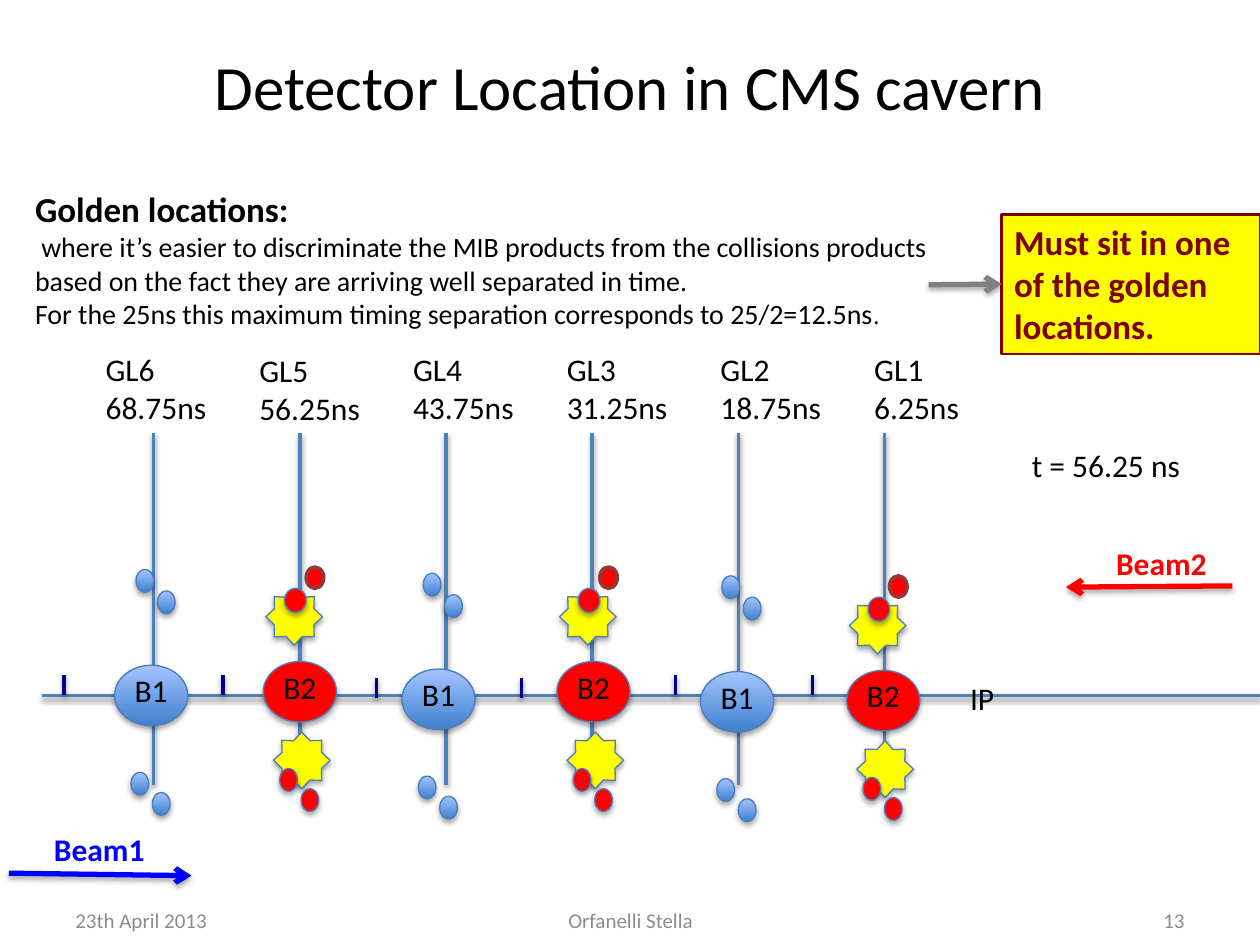
from lxml import etree
from pptx import Presentation
from pptx.dml.color import RGBColor
from pptx.enum.shapes import MSO_CONNECTOR, MSO_SHAPE
from pptx.enum.text import MSO_ANCHOR, PP_ALIGN
from pptx.oxml.ns import qn
from pptx.util import Inches, Pt

COLORS = {
    "black": "000000", "grey": "8C8C8C", "arrow": "808080", "red": "FF0000",
    "blue": "0000FF", "navy": "000090", "maroon": "800000", "yellow": "FFFF00",
    "axis": "4F81BD", "outline": "4B7EBC", "late": "8E3B39",
    "bunch_low": "3F80CE", "bunch_high": "A4C4FF",
}
BEAM1_FILL = ("bunch_low", "bunch_high")


def rgb(name):
    return RGBColor.from_string(COLORS[name])


class SlideBuilder:
    """Holds the style, the slide and the shape collection being filled."""

    font = "Calibri"

    def __init__(self, deck):
        self.slide = deck.slides.add_slide(deck.slide_layouts[5])
        self.shapes = self.slide.shapes

    def begin_group(self):
        self.shapes = self.slide.shapes.add_group_shape().shapes

    def end_group(self):
        self.shapes = self.slide.shapes

    def effect(self, shape, opacity=35, distance=1.8):
        """Give a soft shadow straight below, or none when opacity is 0."""
        properties = shape._element.spPr
        for old in properties.findall(qn("a:effectLst")):
            properties.remove(old)
        effects = etree.SubElement(properties, qn("a:effectLst"))
        if opacity:
            shadow = etree.SubElement(
                effects, qn("a:outerShdw"), blurRad=str(Pt(3.1)),
                dist=str(Pt(distance)), dir="5400000", rotWithShape="0")
            color = etree.SubElement(shadow, qn("a:srgbClr"), val=COLORS["black"])
            etree.SubElement(color, qn("a:alpha"), val=str(opacity * 1000))

    def fill_text(self, frame, paragraphs, color="black", align=PP_ALIGN.LEFT,
                  anchor=MSO_ANCHOR.TOP):
        """Each paragraph is a list of (text, size, bold) runs."""
        frame.word_wrap = True
        frame.vertical_anchor = anchor
        for index, runs in enumerate(paragraphs):
            para = frame.paragraphs[0] if index == 0 else frame.add_paragraph()
            para.alignment = align
            for text, size, bold in runs:
                span = para.add_run()
                span.text = text
                span.font.name = self.font
                span.font.size = Pt(size)
                span.font.bold = bold
                span.font.color.rgb = rgb(color)

    def title(self, text, left, top, width, height):
        title = self.slide.shapes.title
        title.left, title.top = Inches(left), Inches(top)
        title.width, title.height = Inches(width), Inches(height)
        self.fill_text(title.text_frame, [[(text, 36, False)]],
                       align=PP_ALIGN.CENTER, anchor=MSO_ANCHOR.MIDDLE)

    def text(self, left, top, width, height, paragraphs, **style):
        box = self.shapes.add_textbox(
            Inches(left), Inches(top), Inches(width), Inches(height))
        self.fill_text(box.text_frame, paragraphs, **style)

    def label(self, left, top, width, lines, bold=False, **style):
        self.text(left, top, width, 0.1 + 0.3 * len(lines),
                  [[(line, 18, bold)] for line in lines], **style)

    def shape(self, kind, left, top, width, height, fill, line="outline",
              weight=0.75, shadow=35):
        shape = self.shapes.add_shape(
            kind, Inches(left), Inches(top), Inches(width), Inches(height))
        if isinstance(fill, tuple):
            shape.fill.gradient()
            shape.fill.gradient_angle = 90
            for stop, name in zip(shape.fill.gradient_stops, fill):
                stop.color.rgb = rgb(name)
        else:
            shape.fill.solid()
            shape.fill.fore_color.rgb = rgb(fill)
        shape.line.color.rgb = rgb(line)
        shape.line.width = Pt(weight)
        self.effect(shape, shadow)
        return shape

    def line(self, start, end, color, weight=2, arrow=False):
        line = self.shapes.add_connector(
            MSO_CONNECTOR.STRAIGHT, *map(Inches, start + end))
        line.line.color.rgb = rgb(color)
        line.line.width = Pt(weight)
        if arrow:
            outline = line._element.spPr.find(qn("a:ln"))
            etree.SubElement(outline, qn("a:tailEnd"), type="arrow")
            self.effect(line)
        else:
            self.effect(line, 38, 1.6)
        return line

    def beam(self, name, color, start, end, label_at):
        self.begin_group()
        self.line(start, end, color, 3, arrow=True)
        self.label(*label_at, 1.2, [name], bold=True, color=color)
        self.end_group()

    def bunch(self, name, left, top, fill, dots, stars=()):
        """A bunch with its secondary particles, placed relative to its corner."""
        self.begin_group()
        for dx, dy in stars:
            self.shape(MSO_SHAPE.STAR_8_POINT, left + dx, top + dy, 0.45, 0.45, "yellow")
        self.shape(MSO_SHAPE.OVAL, left, top, 0.58, 0.48, fill)
        self.label(left + 0.06, top, 0.52, [name])
        for dx, dy, width, height in dots:
            self.shape(MSO_SHAPE.OVAL, left + dx, top + dy, width, height, fill)
        if stars:
            self.shape(MSO_SHAPE.OVAL, left + 0.34, top - 0.75, 0.14, 0.17,
                       fill, "late", 2, shadow=0)
        self.end_group()


def main():
    deck = Presentation()
    deck.slide_width, deck.slide_height = Inches(10), Inches(7.5)
    page = SlideBuilder(deck)
    page.title("Detector Location in CMS cavern", 1.29, 0, 7.42, 1.35)

    # Beam line, golden locations and the marks between them
    page.line((0.33, 5.52), (10, 5.52), "axis")
    times = ["68.75ns", "56.25ns", "43.75ns", "31.25ns", "18.75ns", "6.25ns"]
    for index, time in enumerate(times):
        x = 1.22 + 1.16 * index
        page.line((x, 3.44), (x, 6.23), "axis")
        top = 2.74 if index == 1 else 2.73
        page.label(0.74 + 1.22 * index, top, 1.23, [f"GL{6 - index}", time])
    for x, top in [(0.51, 5.36), (1.77, 5.36), (2.99, 5.38),
                   (4.14, 5.38), (5.36, 5.36), (6.45, 5.36)]:
        page.line((x, top), (x, top + 0.16), "navy")

    page.label(8.09, 3.49, 1.41, ["t = 56.25 ns"])
    page.label(7.6, 5.34, 0.49, ["IP"])
    page.beam("Beam2", "red", (9.78, 4.65), (8.46, 4.66), (8.76, 4.27))
    page.beam("Beam1", "blue", (0.07, 6.93), (1.52, 6.95), (0.33, 6.54))

    lower_dots = [(0.13, 0.85, 0.14, 0.18), (0.3, 1.01, 0.14, 0.18)]
    beam1_dots = lower_dots + [(0.17, -0.76, 0.14, 0.18), (0.34, -0.59, 0.14, 0.18)]
    beam2_dots = lower_dots + [(0.17, -0.58, 0.17, 0.19)]
    for left, top in [(6.72, 5.32), (4.42, 5.25), (2.09, 5.25)]:
        page.bunch("B2", left, top, "red", beam2_dots,
                   stars=[(0.02, -0.58), (0.08, 0.56)])
    for left, top in [(0.91, 5.28), (3.19, 5.31), (5.56, 5.33)]:
        page.bunch("B1", left, top, BEAM1_FILL, beam1_dots)

    page.text(0.18, 1.44, 7.33, 1.25, [
        [("Golden locations:", 20, True)],
        [(" where it’s easier to discriminate the MIB products from the collisions "
          "products based on the fact they are arriving well separated in time.",
          16, False)],
        [("For the 25ns this maximum timing separation corresponds to 25/2=12.5ns",
          16, False), (".", 14, False)],
    ])
    advice = page.shape(MSO_SHAPE.RECTANGLE, 7.95, 1.7, 2.05, 1.11,
                        "yellow", "maroon", 1.5, shadow=0)
    page.fill_text(advice.text_frame,
                   [[("Must sit in one of the golden locations.", 20, True)]], "maroon")
    pointer = page.line((7.37, 2.26), (7.95, 2.26), "arrow", 3, arrow=True)
    pointer.end_connect(advice, 1)

    for left, width, text, align in [
            (0.5, 2.33, "23th April 2013", PP_ALIGN.LEFT),
            (3.42, 3.17, "Orfanelli Stella", PP_ALIGN.CENTER),
            (7.17, 2.33, "13", PP_ALIGN.RIGHT)]:
        page.text(left, 7.1, width, 0.4, [[(text, 12, False)]], color="grey",
                  align=align, anchor=MSO_ANCHOR.MIDDLE)

    deck.save("out.pptx")


if __name__ == "__main__":
    main()
